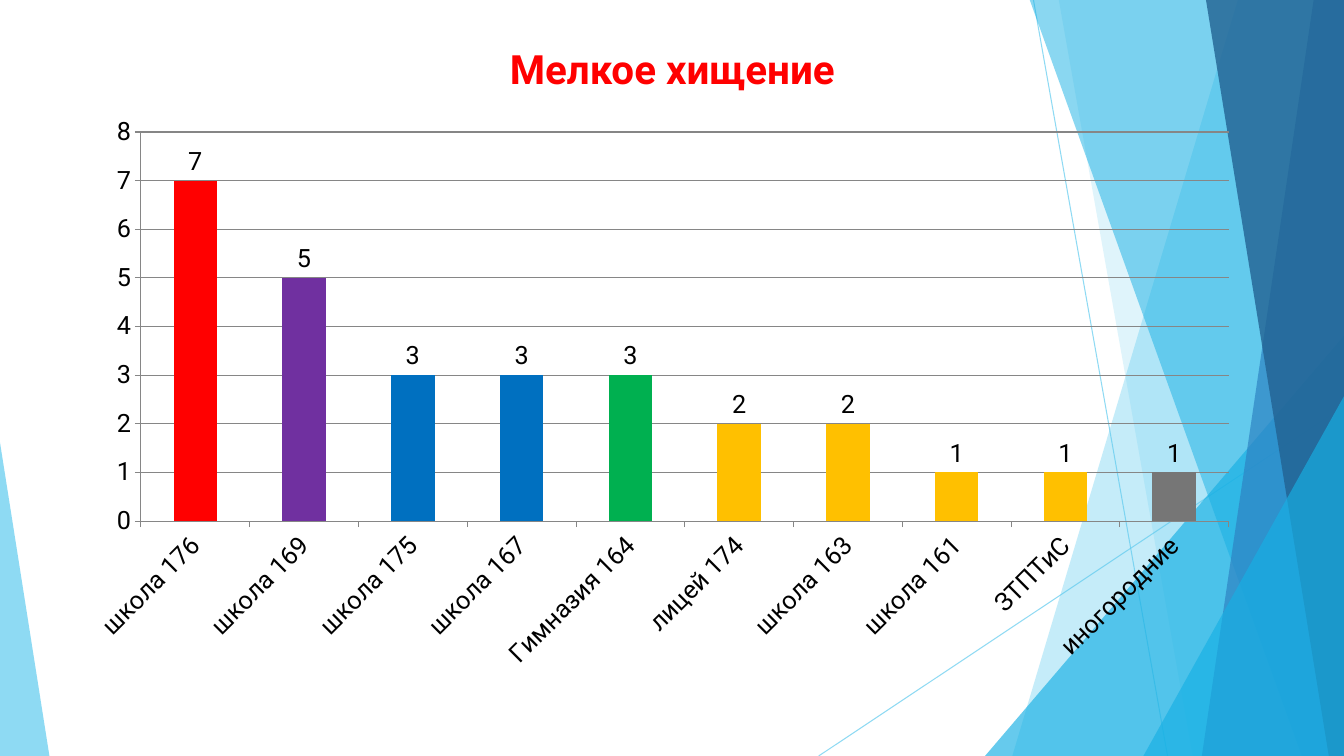
import lxml.etree
import pptx
import pptx.chart.data
import pptx.dml.color
import pptx.enum.chart
import pptx.enum.shapes
import pptx.enum.text
import pptx.oxml
import pptx.oxml.ns
import pptx.util

Inches = pptx.util.Inches
Pt = pptx.util.Pt
qn = pptx.oxml.ns.qn


def paint(fill, colour):
    fill.solid()
    fill.fore_color.rgb = pptx.dml.color.RGBColor.from_string(colour)


def fade(shape, opacity):
    """Set the opacity, in percent, of every colour of the shape."""
    for colour in list(shape.element.spPr.iter(qn("a:srgbClr"))):
        lxml.etree.SubElement(colour, qn("a:alpha"), val=str(opacity * 1000))


deck = pptx.Presentation()
deck.slide_width = Inches(13.33)
deck.slide_height = Inches(7.5)
page = deck.slides.add_slide(deck.slide_layouts[6])

# Thin rays behind the facets
for ends in [(10.25, 0, 11.58, 7.5), (13.33, 4.03, 8.12, 7.5)]:
    ray = page.shapes.add_connector(
        pptx.enum.shapes.MSO_CONNECTOR.STRAIGHT, *map(Inches, ends))
    paint(ray.line.fill, "5FCBEF")
    ray.line.width = Pt(0.75)
    fade(ray, 70)
    lxml.etree.SubElement(ray.element.spPr, qn("a:effectLst"))

# Bands reach the right edge and are given by their top and bottom left x;
# triangles are given by left, top, width and the side of the apex
facets = [
    ("band", (12.28, 10.04), "5FCBEF", 36),
    ("band", (10.5, 11.83), "5FCBEF", 20),
    ("triangle", (9.77, 3.33, 3.56, 1), "17B0E4", 66),
    ("band", (10.21, 12.91), "17B0E4", 50),
    ("band", (13.03, 11.92), "2E83C3", 70),
    ("band", (11.96, 13.18), "226292", 80),
    ("triangle", (11.34, 3.93, 1.99, 1), "17B0E4", 66),
    ("triangle", (0, 4.39, 0.49, 0), "5FCBEF", 70),
]
for kind, measures, colour, opacity in facets:
    if kind == "band":
        top_x, bottom_x = measures
        outline = page.shapes.build_freeform(Inches(top_x), Inches(-0.01))
        corners = [(13.33, -0.01), (13.33, 7.5), (bottom_x, 7.5)]
        outline.add_line_segments([(Inches(x), Inches(y)) for x, y in corners])
        facet = outline.convert_to_shape()
    else:
        left, top, width, apex = measures
        facet = page.shapes.add_shape(
            pptx.enum.shapes.MSO_SHAPE.ISOSCELES_TRIANGLE,
            Inches(left), Inches(top), Inches(width), Inches(7.5 - top))
        facet.adjustments[0] = apex
    facet.shadow.inherit = False
    paint(facet.fill, colour)
    facet.line.fill.background()
    fade(facet, opacity)

# Title
box = page.shapes.add_textbox(Inches(0.92), Inches(0.4), Inches(11.5), Inches(0.56))
frame_format = {
    "word_wrap": True,
    "vertical_anchor": pptx.enum.text.MSO_ANCHOR.MIDDLE,
    "margin_top": 0,
    "margin_bottom": 0,
}
for name, value in frame_format.items():
    setattr(box.text_frame, name, value)
para = box.text_frame.paragraphs[0]
para.alignment = pptx.enum.text.PP_ALIGN.CENTER
span = para.add_run()
span.text = "Мелкое хищение"
for name, value in {"name": "Roboto", "size": Pt(28.8), "bold": True}.items():
    setattr(span.font, name, value)
paint(span.font.fill, "FF0000")

# Column chart
thefts = [
    ("школа 176", 7, "FF0000"),
    ("школа 169", 5, "7030A0"),
    ("школа 175", 3, "0070C0"),
    ("школа 167", 3, "0070C0"),
    ("Гимназия 164", 3, "00B050"),
    ("лицей 174", 2, "FFC000"),
    ("школа 163", 2, "FFC000"),
    ("школа 161", 1, "FFC000"),
    ("ЗТПТиС", 1, "FFC000"),
    ("иногородние", 1, "767676"),
]
chart_data = pptx.chart.data.CategoryChartData()
chart_data.categories = [school for school, count, colour in thefts]
chart_data.add_series("Series 1", [count for school, count, colour in thefts])
chart = page.shapes.add_chart(
    pptx.enum.chart.XL_CHART_TYPE.COLUMN_CLUSTERED,
    Inches(0.72), Inches(1.05), Inches(11.7), Inches(5.7), chart_data).chart
chart.has_legend = False
chart.has_title = False
chart.font.name = "Roboto"
chart.font.size = Pt(18)
paint(chart.font.fill, "000000")

plot = chart.plots[0]
plot.gap_width = 150
plot.vary_by_categories = False
plot.has_data_labels = True
label_format = {
    "show_value": True,
    "position": pptx.enum.chart.XL_LABEL_POSITION.OUTSIDE_END,
}
for name, value in label_format.items():
    setattr(plot.data_labels, name, value)
columns = plot.series[0]
paint(columns.format.fill, thefts[0][2])
for index, (school, count, colour) in enumerate(thefts):
    paint(columns.points[index].format.fill, colour)

axis_format = {
    "major_tick_mark": pptx.enum.chart.XL_TICK_MARK.OUTSIDE,
    "minor_tick_mark": pptx.enum.chart.XL_TICK_MARK.NONE,
}
for axis in (chart.category_axis, chart.value_axis):
    for name, value in axis_format.items():
        setattr(axis, name, value)
    axis.tick_labels.font.size = Pt(18)
scale = {
    "minimum_scale": 0,
    "maximum_scale": 8,
    "major_unit": 1,
    "has_major_gridlines": True,
}
for name, value in scale.items():
    setattr(chart.value_axis, name, value)
for rule in (chart.category_axis, chart.value_axis, chart.value_axis.major_gridlines):
    paint(rule.format.line.fill, "868686")
    rule.format.line.width = Pt(0.75)

# School names slant upwards by 45 degrees
slant = chart.category_axis.element if hasattr(chart.category_axis, "element") \
    else chart.category_axis._element
slant.find(qn("c:txPr")).find(qn("a:bodyPr")).set("rot", "-2700000")

deck.save("out.pptx")
